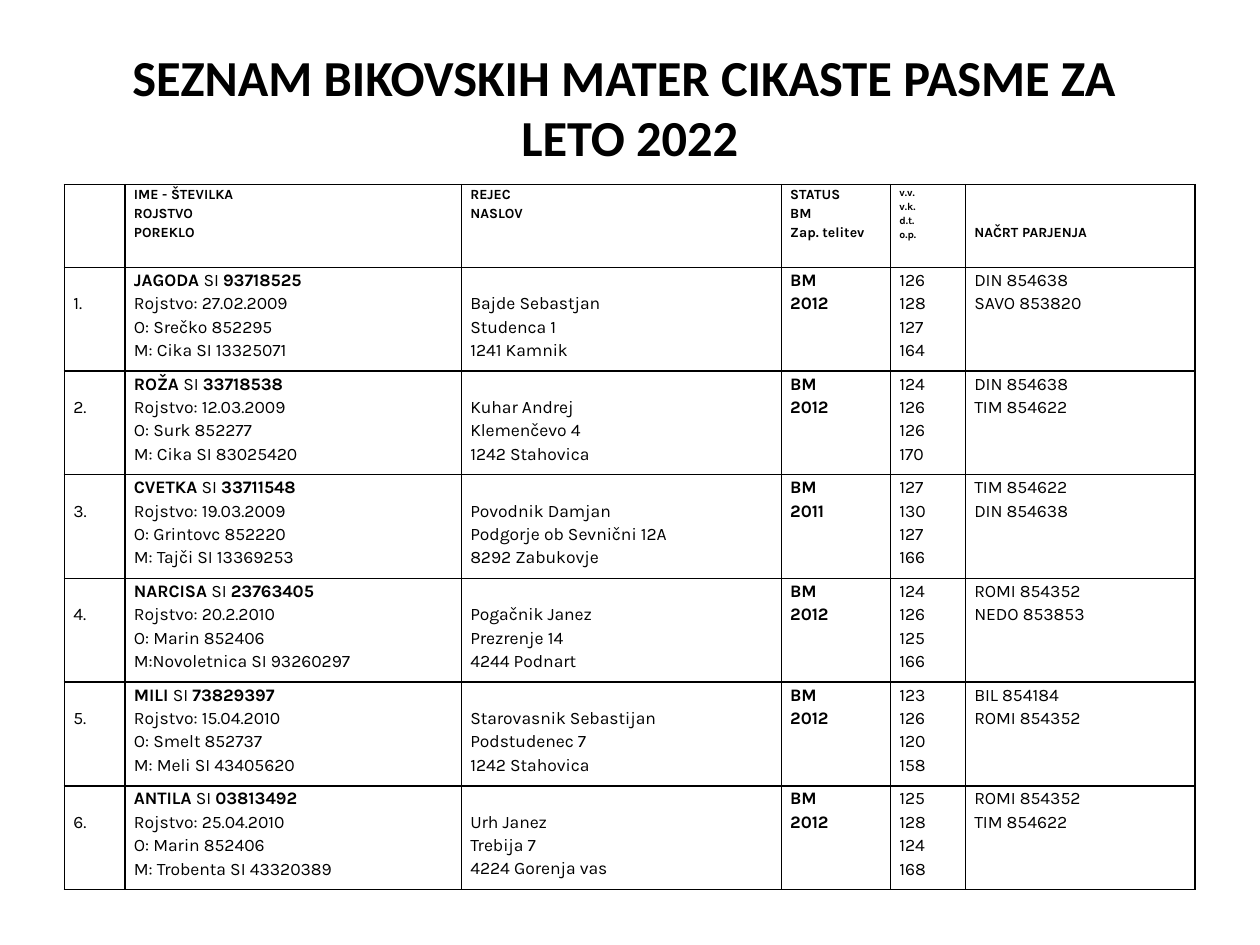
from lxml import etree
from pptx import Presentation, util as u
from pptx.dml import color
from pptx.enum import text
from pptx.oxml import ns

TITLE = "SEZNAM BIKOVSKIH MATER CIKASTE PASME ZA \vLETO 2022"
COLUMN_WIDTHS = [1.22, 6.78, 6.45, 2.2, 1.51, 4.63]
HEADER_HEIGHT, ROW_HEIGHT = 1.67, 2.09
HEADER_LINE, BODY_LINE = 0.38, 0.47

# Lines, text size and empty lines above, one entry per column
HEADERS = [
    ([], 8, 0),
    (["IME - ŠTEVILKA", "ROJSTVO", "POREKLO"], 8, 0),
    (["REJEC", "NASLOV"], 8, 0),
    (["STATUS", "BM", "Zap. telitev"], 8, 0),
    (["v.v.", "v.k.", "d.t.", "o.p."], 6, 0),
    (["NAČRT PARJENJA"], 8, 2),
]

# Name, number, birth and parents, breeder, year, scores, mating plan
COWS = [
    ("JAGODA", "93718525", ["Rojstvo: 27.02.2009", "O: Srečko 852295", "M: Cika SI 13325071"],
     ["Bajde Sebastjan", "Studenca 1", "1241 Kamnik"],
     "2012", [126, 128, 127, 164], ["DIN 854638", "SAVO 853820"]),
    ("ROŽA", "33718538", ["Rojstvo: 12.03.2009", "O: Surk 852277", "M: Cika SI 83025420"],
     ["Kuhar Andrej", "Klemenčevo 4", "1242 Stahovica"],
     "2012", [124, 126, 126, 170], ["DIN 854638", "TIM 854622"]),
    ("CVETKA", "33711548", ["Rojstvo: 19.03.2009", "O: Grintovc 852220", "M: Tajči SI 13369253"],
     ["Povodnik Damjan", "Podgorje ob Sevnični 12A", "8292 Zabukovje"],
     "2011", [127, 130, 127, 166], ["TIM 854622", "DIN 854638"]),
    ("NARCISA", "23763405", ["Rojstvo: 20.2.2010", "O: Marin 852406", "M:Novoletnica SI 93260297"],
     ["Pogačnik Janez", "Prezrenje 14", "4244 Podnart"],
     "2012", [124, 126, 125, 166], ["ROMI 854352", "NEDO 853853"]),
    ("MILI", "73829397", ["Rojstvo: 15.04.2010", "O: Smelt 852737", "M: Meli SI 43405620"],
     ["Starovasnik Sebastijan", "Podstudenec 7", "1242 Stahovica"],
     "2012", [123, 126, 120, 158], ["BIL 854184", "ROMI 854352"]),
    ("ANTILA", "03813492", ["Rojstvo: 25.04.2010", "O: Marin 852406", "M: Trobenta SI 43320389"],
     ["Urh Janez", "Trebija 7", "4224 Gorenja vas"],
     "2012", [125, 128, 124, 168], ["ROMI 854352", "TIM 854622"]),
]


def rgb(value):
    return color.RGBColor.from_string(value)


class Page:
    """Holds the style and the slide being filled."""

    ink = "000000"
    title_font, body_font = "Calibri", "Karla"

    def __init__(self, deck):
        self.slide = deck.slides.add_slide(deck.slide_layouts[5])

    def style(self, span, font, size, bold):
        span.font.name = font
        span.font.size = u.Pt(size)
        span.font.bold = bold
        span.font.color.rgb = rgb(self.ink)

    def title(self, wording, left, top, width, height):
        box = self.slide.shapes.title
        box.left, box.top, box.width, box.height = map(u.Cm, (left, top, width, height))
        frame = box.text_frame
        frame.text = wording
        frame.word_wrap = True
        frame.auto_size = text.MSO_AUTO_SIZE.NONE
        frame.vertical_anchor = text.MSO_ANCHOR.MIDDLE
        para = frame.paragraphs[0]
        para.alignment = text.PP_ALIGN.CENTER
        for span in para.runs:
            self.style(span, self.title_font, 28.8, True)

    def table(self, left, top, widths, heights):
        frame = self.slide.shapes.add_table(
            len(heights), len(widths), u.Cm(left), u.Cm(top),
            u.Cm(sum(widths)), u.Cm(sum(heights)))
        table = frame.table
        table.first_row = table.horz_banding = False
        for column, width in zip(table.columns, widths):
            column.width = u.Cm(width)
        for row, height in zip(table.rows, heights):
            row.height = u.Cm(height)
        for cell in table.iter_cells():
            self.border(cell)
            cell.fill.background()
        return table

    def border(self, cell):
        properties = cell._tc.get_or_add_tcPr()
        for side in ("a:lnL", "a:lnR", "a:lnT", "a:lnB"):
            line = etree.SubElement(properties, ns.qn(side), w=str(u.Pt(1)))
            fill = etree.SubElement(line, ns.qn("a:solidFill"))
            etree.SubElement(fill, ns.qn("a:srgbClr"), val=self.ink)

    def fill_cell(self, cell, lines, size=10, bold=False, gap=0):
        """Write lines, each a string or a list of (wording, bold) spans, below a gap in cm."""
        cell.margin_left = cell.margin_right = u.Cm(0.18)
        cell.margin_top, cell.margin_bottom = u.Cm(gap), 0
        frame = cell.text_frame
        for index, line in enumerate(lines):
            para = frame.add_paragraph() if index else frame.paragraphs[0]
            para.alignment = text.PP_ALIGN.JUSTIFY
            para.line_spacing = 1.15
            spans = [(line, bold)] if isinstance(line, str) else line
            for wording, strong in spans:
                span = para.add_run()
                span.text = wording
                self.style(span, self.body_font, size, strong)


def main():
    deck = Presentation()
    deck.slide_width, deck.slide_height = u.Cm(25.4), u.Cm(19.05)
    page = Page(deck)
    page.title(TITLE, 0.9, 0.74, 23.6, 2.8)

    heights = [HEADER_HEIGHT] + [ROW_HEIGHT] * len(COWS)
    table = page.table(1.3, 3.72, COLUMN_WIDTHS, heights)
    for column, (lines, size, skipped) in enumerate(HEADERS):
        page.fill_cell(table.cell(0, column), lines, size, True, skipped * HEADER_LINE)

    for row, (name, number, origin, breeder, year, scores, plan) in enumerate(COWS, 1):
        identity = [(f"{name} ", True), ("SI ", False), (number, True)]
        columns = [
            ([f"{row}."], False, BODY_LINE),
            ([identity, *origin], False, 0),
            (breeder, False, BODY_LINE),
            (["BM", year], True, 0),
            ([str(score) for score in scores], False, 0),
            (plan, False, 0),
        ]
        for column, (lines, bold, gap) in enumerate(columns):
            page.fill_cell(table.cell(row, column), lines, bold=bold, gap=gap)

    deck.save("out.pptx")


if __name__ == "__main__":
    main()
